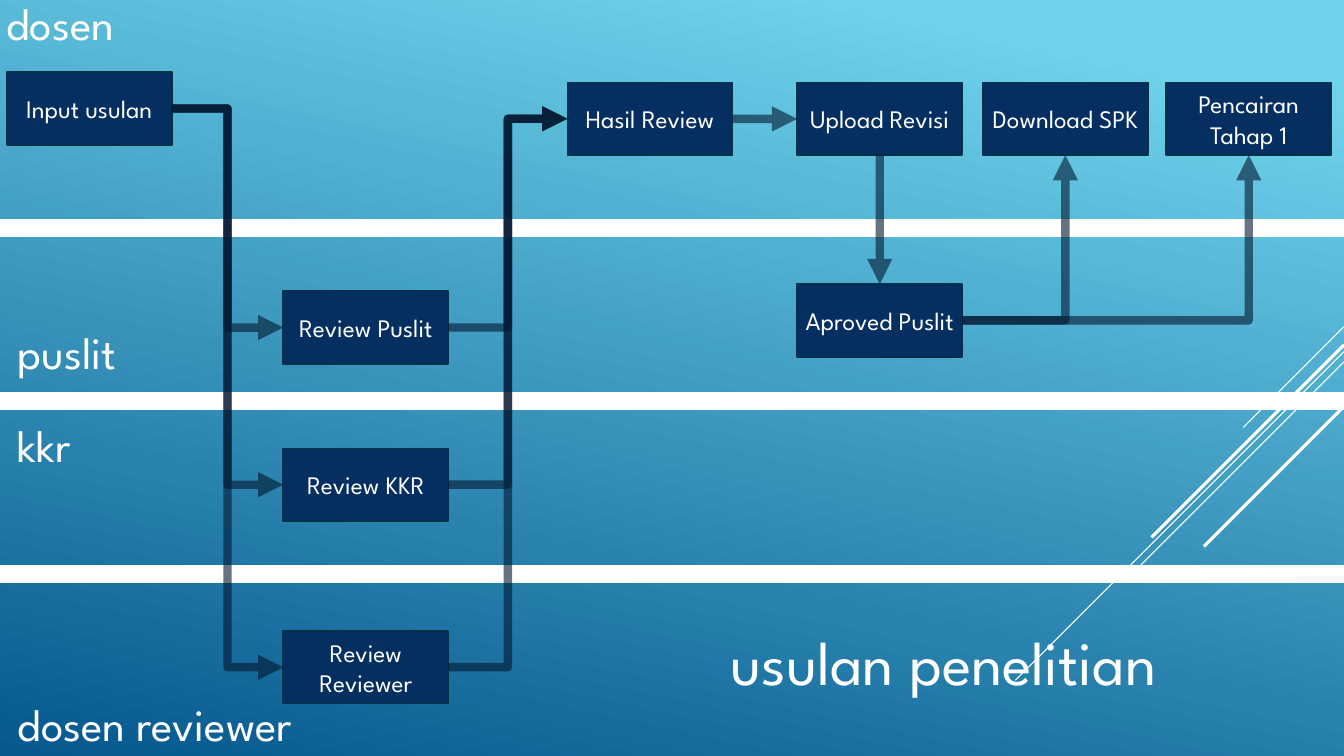
"""Builds the swimlane slide for the research proposal workflow."""
from lxml import etree
from pptx import Presentation
from pptx.dml.color import RGBColor
from pptx.enum.shapes import MSO_CONNECTOR, MSO_SHAPE
from pptx.enum.text import MSO_ANCHOR, MSO_AUTO_SIZE, PP_ALIGN
from pptx.oxml.ns import qn
from pptx.util import Cm, Pt

RECTANGLE = MSO_SHAPE.RECTANGLE
STRAIGHT, ELBOW = MSO_CONNECTOR.STRAIGHT, MSO_CONNECTOR.ELBOW
LEFT, CENTER = PP_ALIGN.LEFT, PP_ALIGN.CENTER
TOP, MIDDLE = MSO_ANCHOR.TOP, MSO_ANCHOR.MIDDLE
NO_AUTOFIT = MSO_AUTO_SIZE.NONE
SITE_TOP, SITE_LEFT, SITE_BOTTOM, SITE_RIGHT = range(4)
FONT = "League Spartan"
WHITE, NAVY, NAVY_EDGE, ARROW = "FFFFFF", "052F61", "043148", "031730"
SLIDE_WIDTH, SLIDE_HEIGHT = 33.87, 19.05


def paint(color_format, hex_color):
    color_format.rgb = RGBColor.from_string(hex_color)


def write(shape, text, size, alignment, anchor):
    frame = shape.text_frame
    frame.text = text
    frame.word_wrap = True
    frame.auto_size = NO_AUTOFIT
    frame.vertical_anchor = anchor
    para = frame.paragraphs[0]
    para.alignment = alignment
    span = para.runs[0]
    span.font.name = FONT
    span.font.size = Pt(size)
    paint(span.font.color, WHITE)


deck = Presentation()
deck.slide_width, deck.slide_height = Cm(SLIDE_WIDTH), Cm(SLIDE_HEIGHT)
page = deck.slides.add_slide(deck.slide_layouts[5])
shapes = page.shapes

background = page.background.fill
background.gradient()
background.gradient_angle = 258
for stop, (position, color) in zip(background.gradient_stops, [(0.1, "6ED2EB"), (1, "06588E")]):
    stop.position = position
    paint(stop.color, color)

diagonals = [(8.23, 2.54, 0.75), (8.86, 8.28, 0.75), (9.12, 5.27, 0.75),
             (8.69, 4.85, 2.25), (10.24, 3.53, 2.25)]
for top, run, weight in diagonals:
    diagonal = shapes.add_connector(STRAIGHT, Cm(SLIDE_WIDTH), Cm(top),
                                    Cm(SLIDE_WIDTH - run), Cm(top + run))
    diagonal.line.width = Pt(weight)
    paint(diagonal.line.color, WHITE)
    etree.SubElement(diagonal._element.spPr, qn("a:effectLst"))

dividers = [(0, top, SLIDE_WIDTH, 0.41, WHITE, WHITE, "") for top in (5.54, 9.91, 14.25)]
steps = [(left, top, 4.16, 1.83, NAVY, NAVY_EDGE, text) for left, top, text in [
    (0.17, 1.82, "Input usulan"),
    (7.14, 7.34, "Review Puslit"),
    (7.14, 11.3, "Review KKR"),
    (7.14, 15.9, "Review Reviewer"),
    (14.3, 2.08, "Hasil Review"),
    (20.09, 2.08, "Upload Revisi"),
    (20.09, 7.16, "Aproved Puslit"),
    (24.77, 2.08, "Download SPK"),
    (29.39, 2.08, "Pencairan Tahap 1"),
]]
boxes = {}
for left, top, width, height, fill, edge, text in dividers + steps:
    box = shapes.add_shape(RECTANGLE, Cm(left), Cm(top), Cm(width), Cm(height))
    box.shadow.inherit = False
    box.fill.solid()
    paint(box.fill.fore_color, fill)
    paint(box.line.color, edge)
    box.line.width = Pt(1.25)
    if text:
        write(box, text, 18, CENTER, MIDDLE)
        box.text_frame.margin_left = box.text_frame.margin_right = Cm(0.2)
        boxes[text] = box

flows = []
for review in ("Review Puslit", "Review KKR", "Review Reviewer"):
    flows.append(("Input usulan", SITE_RIGHT, review, SITE_LEFT, "bentConnector3"))
    flows.append((review, SITE_RIGHT, "Hasil Review", SITE_LEFT, "bentConnector3"))
flows += [
    ("Hasil Review", SITE_RIGHT, "Upload Revisi", SITE_LEFT, "line"),
    ("Upload Revisi", SITE_BOTTOM, "Aproved Puslit", SITE_TOP, "line"),
    ("Aproved Puslit", SITE_RIGHT, "Download SPK", SITE_BOTTOM, "bentConnector2"),
    ("Aproved Puslit", SITE_RIGHT, "Pencairan Tahap 1", SITE_BOTTOM, "bentConnector2"),
]
for source, source_site, target, target_site, geometry in flows:
    arrow = shapes.add_connector(STRAIGHT if geometry == "line" else ELBOW, 0, 0, 0, 0)
    arrow.begin_connect(boxes[source], source_site)
    arrow.end_connect(boxes[target], target_site)
    arrow.line.width = Pt(6)
    paint(arrow.line.color, ARROW)
    properties = arrow._element.spPr
    properties.find(qn("a:prstGeom")).set("prst", geometry)
    outline = properties.find(qn("a:ln"))
    etree.SubElement(outline.find(".//" + qn("a:srgbClr")), qn("a:alpha"), val="60000")
    etree.SubElement(outline, qn("a:tailEnd"), type="triangle")
    etree.SubElement(properties, qn("a:effectLst"))

lanes = [(-0.08, -0.23, 14.66, "dosen"), (0.2, 8.05, 4.52, "puslit"),
         (0.2, 10.39, 4.52, "kkr"), (0.2, 17.42, 14.66, "dosen reviewer")]
for left, top, width, text in lanes:
    label = shapes.add_textbox(Cm(left), Cm(top), Cm(width), Cm(1.63))
    write(label, text, 32, LEFT, TOP)

title = shapes.title
title.left, title.top, title.width, title.height = Cm(18.16), Cm(15.6), Cm(14.66), Cm(2.13)
write(title, "usulan penelitian", 44, LEFT, TOP)
shapes._spTree.append(title._element)

deck.save("out.pptx")
